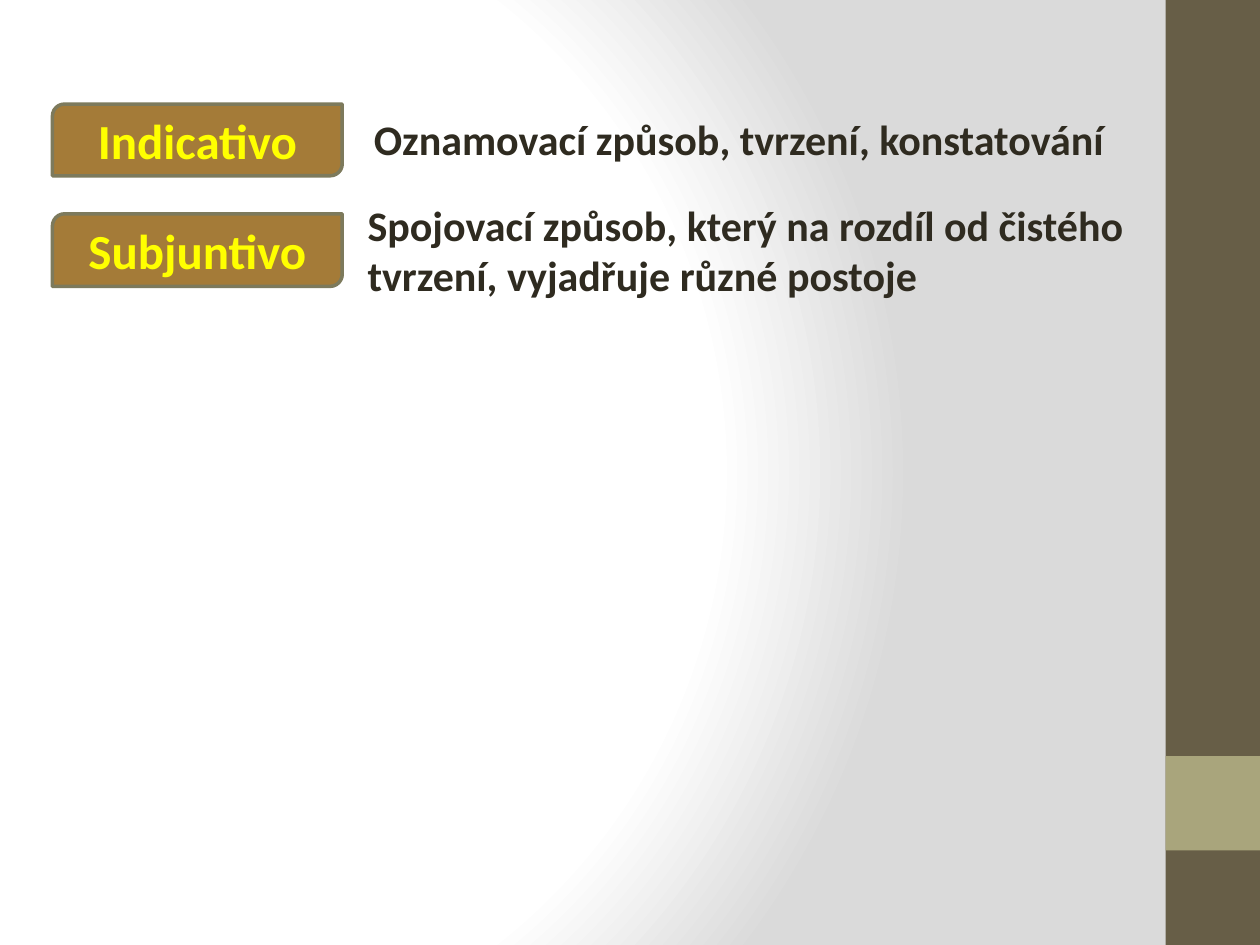
from pptx import Presentation
from pptx.dml.color import RGBColor
from pptx.enum.shapes import MSO_SHAPE
from pptx.enum.text import MSO_ANCHOR, MSO_AUTO_SIZE, PP_ALIGN
from pptx.oxml import parse_xml
from pptx.util import Pt

RECTANGLE = MSO_SHAPE.RECTANGLE
DIAGONAL_ROUND = MSO_SHAPE.ROUND_2_DIAG_RECTANGLE
MIDDLE = MSO_ANCHOR.MIDDLE
CENTER = PP_ALIGN.CENTER
FIT_SHAPE = MSO_AUTO_SIZE.SHAPE_TO_FIT_TEXT

FONT = "Calibri"
WIDTH, HEIGHT = 720, 540
COLORS = {
    "white": "FFFFFF",
    "gray": "DADADA",
    "band": "675E47",
    "accent": "A9A57C",
    "label": "A47B38",
    "label_line": "7D7A5C",
    "label_text": "FFFF00",
    "text": "2F2B20",
}
DRAWING_NS = "http://schemas.openxmlformats.org/drawingml/2006/main"


def color(name):
    return RGBColor.from_string(COLORS[name])


def set_background(slide):
    """Circular gradient from white to gray."""
    fill = slide.background.fill
    fill.gradient()
    gradient = slide.background._cSld.bg.bgPr.find(f"{{{DRAWING_NS}}}gradFill")
    stops = "".join(
        f'<a:gs pos="{percent * 1000}"><a:srgbClr val="{COLORS[name]}"/></a:gs>'
        for percent, name in ((0, "white"), (75, "white"), (100, "gray"))
    )
    circle = parse_xml(
        f'<a:gradFill xmlns:a="{DRAWING_NS}" rotWithShape="1">'
        f'<a:gsLst>{stops}</a:gsLst><a:path path="circle">'
        '<a:fillToRect l="20000" t="50000" r="100000" b="50000"/>'
        "</a:path></a:gradFill>"
    )
    gradient.getparent().replace(gradient, circle)


def add_block(slide, kind, box, fill):
    shape = slide.shapes.add_shape(kind, *map(Pt, box))
    shape.shadow.inherit = False
    shape.fill.solid()
    shape.fill.fore_color.rgb = color(fill)
    shape.line.fill.background()
    return shape


def add_run(paragraph, text, size, color_name):
    run = paragraph.add_run()
    run.text = text
    run.font.name = FONT
    run.font.size = Pt(size)
    run.font.bold = True
    run.font.color.rgb = color(color_name)


def add_side_band(slide, left, top, width, height):
    """Dark band with a square accent, one square above the bottom."""
    add_block(slide, RECTANGLE, (left, top, width, height), "band")
    accent_top = top + height - 2 * width
    add_block(slide, RECTANGLE, (left, accent_top, width, width), "accent")


def add_label(slide, box, text):
    shape = add_block(slide, DIAGONAL_ROUND, box, "label")
    shape.line.color.rgb = color("label_line")
    shape.line.width = Pt(2)
    frame = shape.text_frame
    frame.vertical_anchor = MIDDLE
    paragraph = frame.paragraphs[0]
    paragraph.alignment = CENTER
    add_run(paragraph, text, 28, "label_text")


def add_definition(slide, box, lines):
    frame = slide.shapes.add_textbox(*map(Pt, box)).text_frame
    frame.word_wrap = False
    frame.auto_size = FIT_SHAPE
    for index, line in enumerate(lines):
        paragraph = frame.add_paragraph() if index else frame.paragraphs[0]
        add_run(paragraph, line, 24, "text")


def add_mood(slide, left, top, label, label_height, lines, text_box):
    """Label with its definition; text_box is relative to the label's corner."""
    add_label(slide, (left, top, 165.6, label_height), label)
    x, y, width, height = text_box
    add_definition(slide, (left + x, top + y, width, height), lines)


def main():
    presentation = Presentation()
    presentation.slide_width = Pt(WIDTH)
    presentation.slide_height = Pt(HEIGHT)
    slide = presentation.slides.add_slide(presentation.slide_layouts[6])

    # Background and side band
    set_background(slide)
    add_side_band(slide, WIDTH - 54, 0, 54, HEIGHT)

    # Moods with their definitions
    add_mood(slide, 30, 59.5, "Indicativo", 41,
             ["Oznamovací způsob, tvrzení, konstatování"],
             (176.6, 1.7, 435.6, 36))
    add_mood(slide, 30, 122.2, "Subjuntivo", 41.5,
             ["Spojovací způsob, který na rozdíl od čistého",
              "tvrzení, vyjadřuje různé postoje"],
             (173, -12, 450.7, 65.5))

    presentation.save("out.pptx")


if __name__ == "__main__":
    main()
